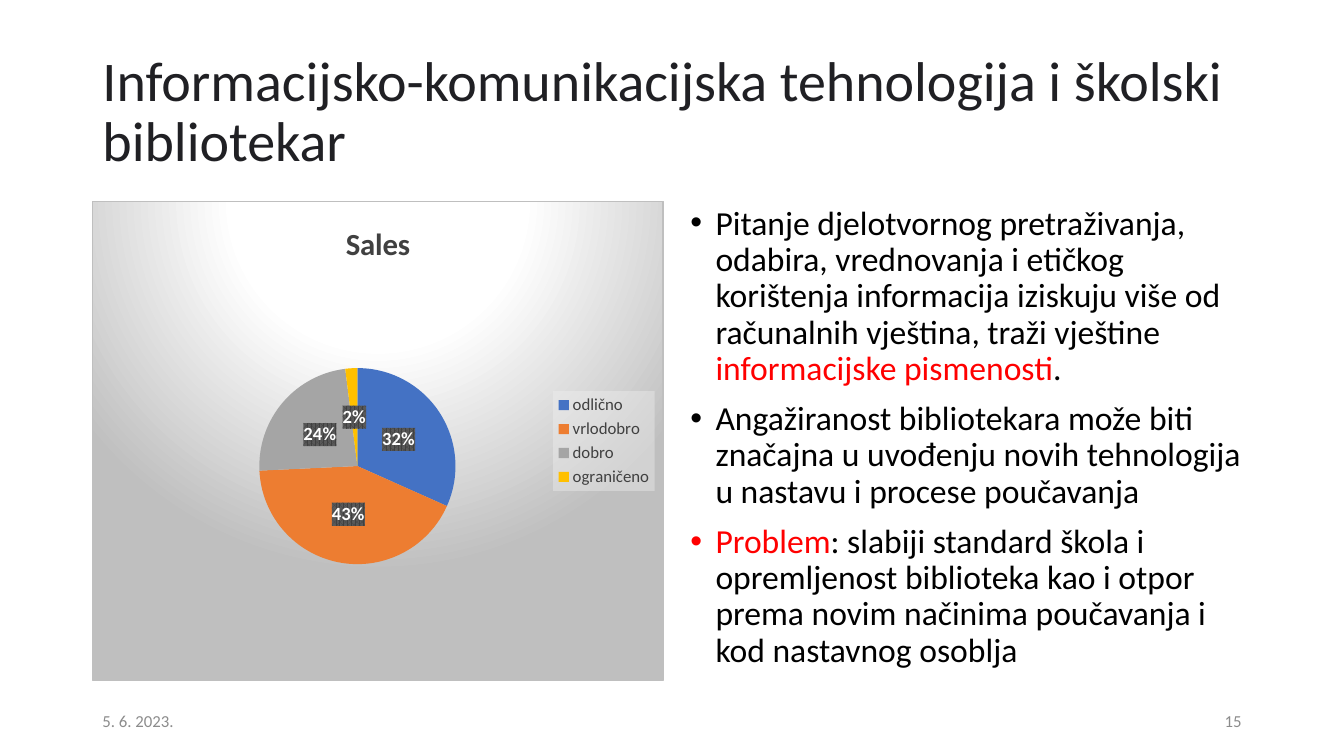
"""Build the slide on information technology and the school librarian."""
from lxml import etree
from pptx import Presentation
from pptx.chart.data import CategoryChartData
from pptx.dml.color import RGBColor
from pptx.enum.chart import XL_CHART_TYPE, XL_LABEL_POSITION, XL_LEGEND_POSITION
from pptx.enum.text import MSO_ANCHOR, MSO_AUTO_SIZE, PP_ALIGN
from pptx.oxml import parse_xml
from pptx.oxml.ns import qn
from pptx.util import Pt

PIE = XL_CHART_TYPE.PIE
CENTER = XL_LABEL_POSITION.CENTER
RIGHT_SIDE = XL_LEGEND_POSITION.RIGHT
MIDDLE = MSO_ANCHOR.MIDDLE
NO_FIT = MSO_AUTO_SIZE.NONE
LEFT, RIGHT = PP_ALIGN.LEFT, PP_ALIGN.RIGHT
FONT = "Calibri"
TOP, WIDTH, HEIGHT = Pt(143.75), Pt(408), Pt(342.6)
COLORS = {"title": "202024", "body": "000000", "accent": "FF0000",
          "footer": "8C8C8C", "chart": "404040", "label": "FFFFFF"}
SLICES = [("odlično", 32, "4472C4"), ("vrlodobro", 43, "ED7D31"),
          ("dobro", 24, "A5A5A5"), ("ograničeno", 2, "FFC000")]
BULLETS = [
    [("Pitanje djelotvornog pretraživanja, odabira, vrednovanja i etičkog korištenja "
      "informacija iziskuju više od računalnih vještina, traži vještine ", "body"),
     ("informacijske pismenosti", "accent"), (".", "body")],
    [("Angažiranost bibliotekara može biti značajna u uvođenju novih tehnologija "
      "u nastavu i procese poučavanja", "body")],
    [("Problem", "accent"),
     (": slabiji standard škola i opremljenost biblioteka kao i otpor prema novim "
      "načinima poučavanja i kod nastavnog osoblja", "body")],
]
FOOTERS = [("5. 6. 2023.", 66, LEFT), ("15", 678, RIGHT)]
NS = ('xmlns:c="http://schemas.openxmlformats.org/drawingml/2006/chart" '
      'xmlns:a="http://schemas.openxmlformats.org/drawingml/2006/main"')
CHART_FILL = """<a:gradFill><a:gsLst>
<a:gs pos="0"><a:srgbClr val="FFFFFF"/></a:gs>
<a:gs pos="39000"><a:srgbClr val="FFFFFF"/></a:gs>
<a:gs pos="100000"><a:srgbClr val="BFBFBF"/></a:gs></a:gsLst>
<a:path path="circle"><a:fillToRect l="50000" t="-80000" r="50000" b="180000"/></a:path>
</a:gradFill><a:ln w="9525"><a:solidFill><a:srgbClr val="BFBFBF"/></a:solidFill></a:ln>"""
LEGEND_FILL = ('<a:solidFill><a:srgbClr val="F2F2F2"><a:alpha val="39000"/></a:srgbClr>'
               '</a:solidFill>')
LABEL_FILL = ('<a:pattFill prst="pct75"><a:fgClr><a:srgbClr val="404040"/></a:fgClr>'
              '<a:bgClr><a:srgbClr val="595959"/></a:bgClr></a:pattFill>')


def style(font, size, color, bold=False):
    font.name, font.size, font.bold = FONT, Pt(size), bold
    font.color.rgb = RGBColor.from_string(COLORS[color])


def sp_pr(fill):
    return parse_xml(f"<c:spPr {NS}>{fill}</c:spPr>")


prs = Presentation()
prs.slide_width, prs.slide_height = Pt(960), Pt(540)
s = prs.slides.add_slide(prs.slide_layouts[5])

title = s.shapes.title
title.left, title.top, title.width, title.height = Pt(66), Pt(28.75), Pt(828), Pt(104.4)
tf = title.text_frame
tf.text = "Informacijsko-komunikacijska tehnologija i školski bibliotekar"
tf.auto_size, tf.vertical_anchor = NO_FIT, MIDDLE
p = tf.paragraphs[0]
p.alignment, p.line_spacing = LEFT, 0.9
style(p.runs[0].font, 40, "title")

data = CategoryChartData()
data.categories = [name for name, _, _ in SLICES]
data.add_series("Sales", [value for _, value, _ in SLICES])
chart = s.shapes.add_chart(PIE, Pt(66), TOP, WIDTH, HEIGHT, data).chart
style(chart.font, 10, "body")
chart.has_title = True
chart.chart_title.text_frame.text = "Sales"
style(chart.chart_title.text_frame.paragraphs[0].runs[0].font, 22, "chart", True)
chart.chart_title.include_in_layout = False
chart.has_legend = True
legend = chart.legend
legend.position, legend.include_in_layout = RIGHT_SIDE, False
style(legend.font, 12, "chart")

plot = chart.plots[0]
plot.vary_by_categories = True
series = plot.series[0]
for i, (_, _, color) in enumerate(SLICES):
    fill = series.points[i].format.fill
    fill.solid()
    fill.fore_color.rgb = RGBColor.from_string(color)
labels = series.data_labels
labels.show_percentage, labels.show_value = True, False
labels.number_format, labels.number_format_is_linked = "0%", False
labels.position = CENTER
style(labels.font, 13.3, "label", True)

root = chart.element
root.find(qn("c:chart")).addnext(sp_pr(CHART_FILL))
for tag, fill in (("c:legend", LEGEND_FILL), ("c:dLbls", LABEL_FILL)):
    root.find(".//" + qn(tag)).find(qn("c:txPr")).addprevious(sp_pr(fill))
area = root.find(".//" + qn("c:plotArea"))
for old in area.findall(qn("c:layout")):
    area.remove(old)
layout = etree.Element(qn("c:layout"))
manual = etree.SubElement(layout, qn("c:manualLayout"))
for tag, value in (("layoutTarget", "inner"), ("xMode", "edge"), ("yMode", "edge"),
                   ("x", "0.292"), ("y", "0.137"), ("w", "0.344"), ("h", "0.831")):
    etree.SubElement(manual, qn("c:" + tag)).set("val", value)
area.insert(0, layout)

body = s.shapes.add_textbox(Pt(486), TOP, WIDTH, HEIGHT)
tf = body.text_frame
tf.word_wrap = True
for i, parts in enumerate(BULLETS):
    p = tf.paragraphs[0] if i == 0 else tf.add_paragraph()
    p.line_spacing, p.space_before = 0.9, Pt(10)
    pPr = p._p.get_or_add_pPr()
    pPr.set("marL", str(Pt(18)))
    pPr.set("indent", str(Pt(-18)))
    etree.SubElement(pPr, qn("a:buFont")).set("typeface", "Arial")
    etree.SubElement(pPr, qn("a:buChar")).set("char", "•")
    for text, color in parts:
        r = p.add_run()
        r.text = text
        style(r.font, 24, color)

for text, left, align in FOOTERS:
    tf = s.shapes.add_textbox(Pt(left), Pt(500.5), Pt(216), Pt(28.75)).text_frame
    tf.text = text
    tf.word_wrap, tf.vertical_anchor = True, MIDDLE
    p = tf.paragraphs[0]
    p.alignment = align
    style(p.runs[0].font, 12, "footer")

prs.save("out.pptx")
